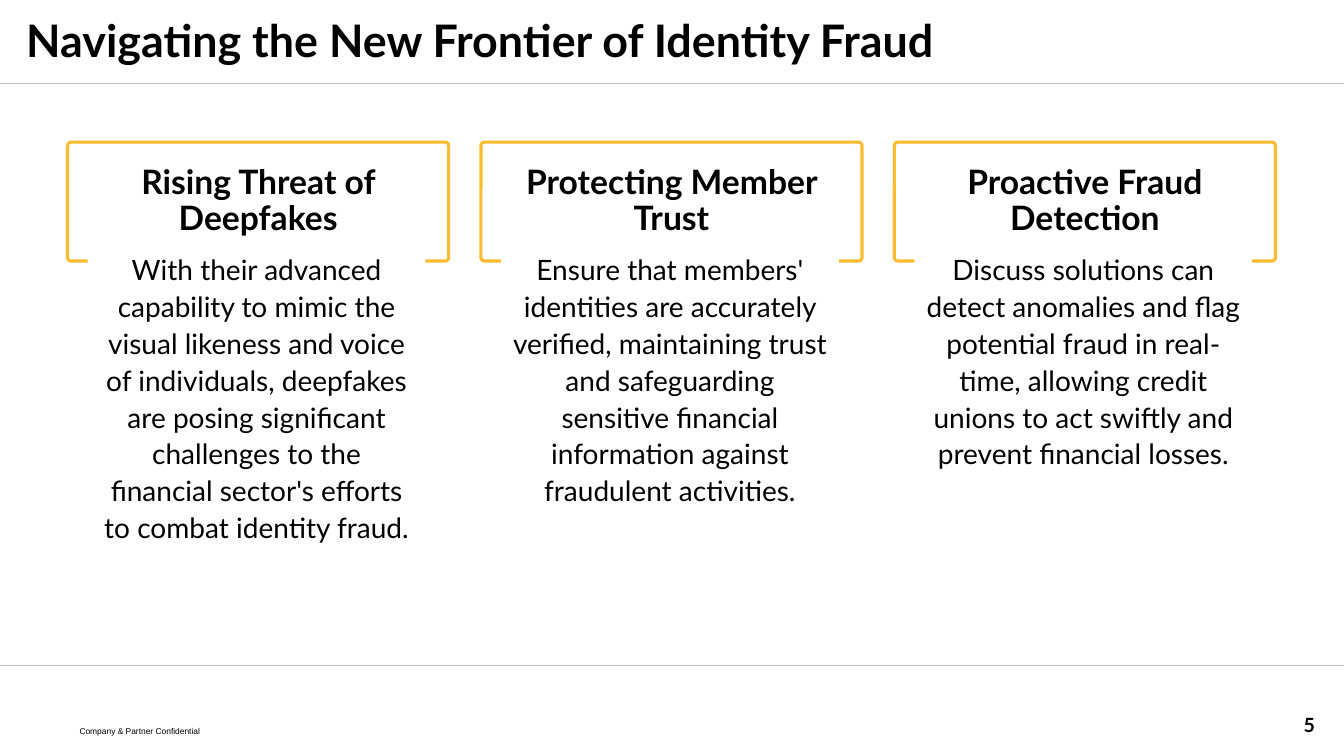
import pptx
import pptx.dml.color
import pptx.enum.shapes
import pptx.enum.text
import pptx.oxml
import pptx.oxml.ns
import pptx.util

Inches = pptx.util.Inches
ALIGN = pptx.enum.text.PP_ALIGN
ANCHOR = pptx.enum.text.MSO_ANCHOR

COLUMNS = [
    ("Rising Threat of Deepfakes",
     "With their advanced capability to mimic the visual likeness and voice of individuals, "
     "deepfakes are posing significant challenges to the financial sector's efforts to combat "
     "identity fraud."),
    ("Protecting Member Trust",
     "Ensure that members' identities are accurately verified, maintaining trust and "
     "safeguarding sensitive financial information against fraudulent activities."),
    ("Proactive Fraud Detection",
     "Discuss solutions can detect anomalies and flag potential fraud in real-time, allowing "
     "credit unions to act swiftly and prevent financial losses."),
]


def color(value):
    """Return the colour for a hex string."""
    return pptx.dml.color.RGBColor.from_string(value)


def write(holder, text, size, font="Lato", bold=False, align=ALIGN.LEFT,
          anchor=ANCHOR.TOP, spacing=1.0):
    """Put one formatted paragraph into a shape."""
    frame = holder.text_frame
    frame.word_wrap = True
    frame.auto_size = pptx.enum.text.MSO_AUTO_SIZE.NONE
    frame.vertical_anchor = anchor
    paragraph = frame.paragraphs[0]
    paragraph.alignment = align
    paragraph.line_spacing = spacing
    run = paragraph.add_run()
    run.text = text
    run.font.name = font
    run.font.size = pptx.util.Pt(size)
    run.font.bold = bold
    run.font.color.rgb = color("000000")


def add_rule(slide, top, width):
    """Draw a thin grey rule across the slide."""
    rule = slide.shapes.add_connector(
        pptx.enum.shapes.MSO_CONNECTOR.STRAIGHT, 0, Inches(top), Inches(width), Inches(top))
    rule.line.color.rgb = color("BFBFBF")
    rule.line.width = pptx.util.Pt(1)
    properties = rule._element.spPr
    properties.append(pptx.oxml.parse_xml(
        "<a:effectLst %s/>" % pptx.oxml.ns.nsdecls("a")))


def add_header(slide, left, top, width, height):
    """Place the slide title and the rule below it."""
    title = slide.shapes.title
    title.left, title.top = Inches(left + 0.16), Inches(top + 0.11)
    title.width, title.height = Inches(width - 0.61), Inches(0.63)
    write(title, "Navigating the New Frontier of Identity Fraud", 32, bold=True,
          anchor=ANCHOR.MIDDLE, spacing=0.9)
    add_rule(slide, top + height, width)


def add_column(slide, left, top, width, height, heading, message):
    """Place an outlined heading with its message overlapping the lower edge."""
    frame = slide.shapes.add_shape(
        pptx.enum.shapes.MSO_SHAPE.ROUNDED_RECTANGLE,
        Inches(left), Inches(top), Inches(width), Inches(1.18))
    frame.adjustments[0] = 0.03
    frame.shadow.inherit = False
    frame.fill.background()
    frame.line.color.rgb = color("FDBB30")
    frame.line.width = pptx.util.Pt(2.25)
    write(frame, heading, 24, bold=True, align=ALIGN.CENTER,
          anchor=ANCHOR.MIDDLE, spacing=0.9)

    body = slide.shapes.add_textbox(
        Inches(left + 0.2), Inches(top + 1.01), Inches(width - 0.43), Inches(height - 1.01))
    body.fill.solid()
    body.fill.fore_color.rgb = color("FFFFFF")
    write(body, message, 20, align=ALIGN.CENTER, spacing=1.1)


def add_footer(slide, left, top, width):
    """Place the footer rule, the confidentiality note and the page number."""
    add_rule(slide, top, width)
    note = slide.shapes.add_textbox(
        Inches(left + 0.69), Inches(top + 0.55), Inches(4.05), Inches(0.26))
    write(note, "Company & Partner Confidential", 6, font="Arial")
    number = slide.shapes.add_textbox(
        Inches(left + width - 3.19), Inches(top + 0.39), Inches(3), Inches(0.4))
    write(number, "5", 14, bold=True, align=ALIGN.RIGHT, anchor=ANCHOR.MIDDLE)


def main():
    """Build and save the slide."""
    deck = pptx.Presentation()
    deck.slide_width, deck.slide_height = Inches(13.33), Inches(7.5)
    slide = deck.slides.add_slide(deck.slide_layouts[5])
    add_header(slide, 0, 0, 13.33, 0.83)
    for index, (heading, message) in enumerate(COLUMNS):
        add_column(slide, 0.67 + 4.1 * index, 1.41, 3.78, 4.83, heading, message)
    add_footer(slide, 0, 6.6, 13.33)
    deck.save("out.pptx")


if __name__ == "__main__":
    main()
